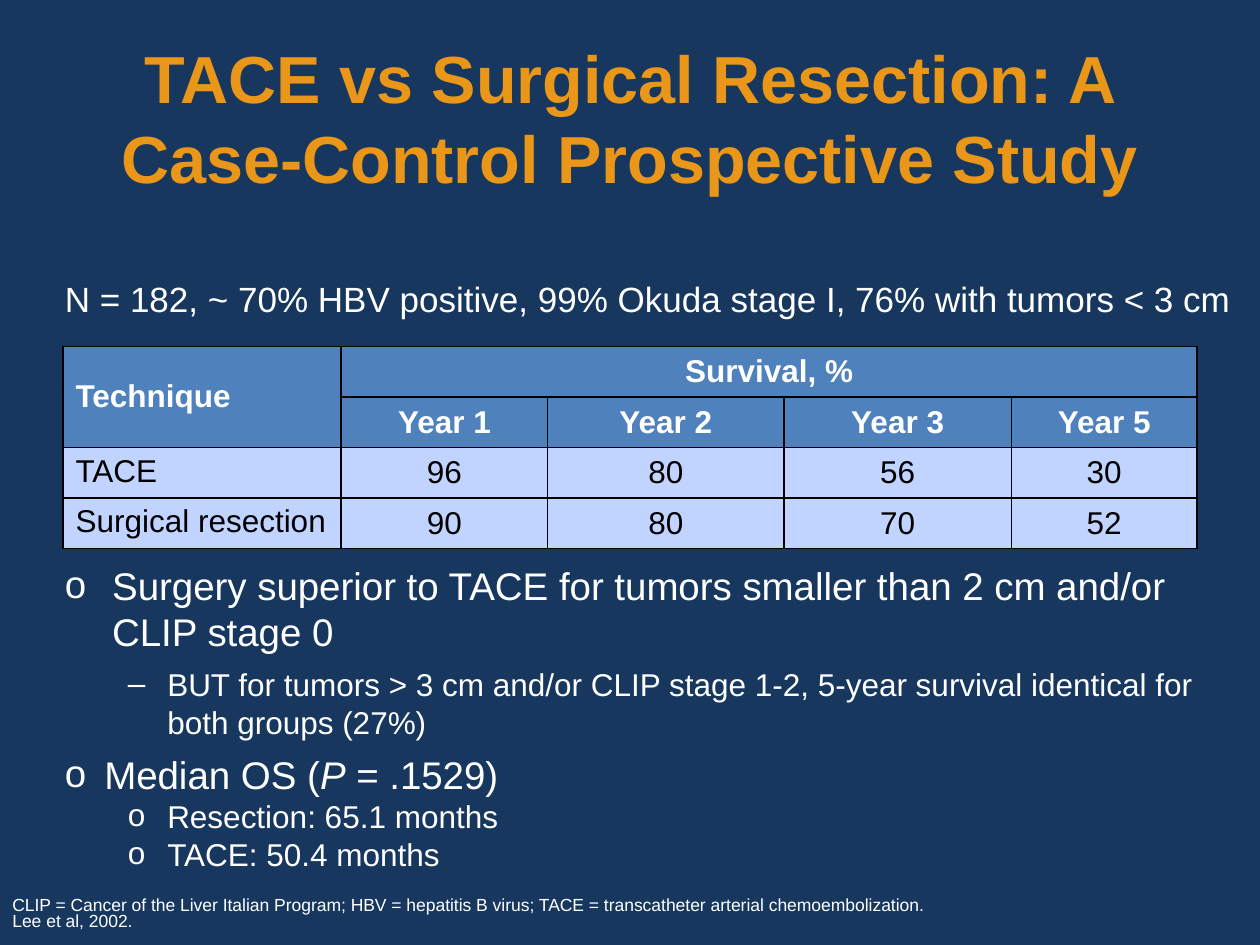
from itertools import product

from lxml.etree import SubElement
from pptx import Presentation
from pptx.dml.color import RGBColor
from pptx.enum.text import MSO_ANCHOR, PP_ALIGN
from pptx.oxml.ns import qn
from pptx.util import Pt

THEME = {
    "font": "Arial",
    "background": RGBColor.from_string("17375E"),
    "title": RGBColor.from_string("E99619"),
    "text": RGBColor.from_string("FFFFFF"),
    "cell text": RGBColor.from_string("000000"),
    "header": RGBColor.from_string("4F81BD"),
    "row": RGBColor.from_string("C0D4FF"),
    "border": "000000",
    "sizes": {"title": 38, "point": 22, "lead": 20, "detail": 18, "note": 10},
}


def write(paragraph, text, size, color=THEME["text"], **styles):
    run = paragraph.add_run()
    run.text = text
    run.font.color.rgb = color
    font = {"name": THEME["font"], "size": Pt(THEME["sizes"][size]), **styles}
    for name, value in font.items():
        setattr(run.font, name, value)


def add_frame(left, top, width, height):
    frame = slide.shapes.add_textbox(Pt(left), Pt(top), Pt(width), Pt(height)).text_frame
    frame.word_wrap = True
    return frame


deck = Presentation()
deck.slide_width, deck.slide_height = Pt(720), Pt(540)
slide = deck.slides.add_slide(deck.slide_layouts[6])
slide.background.fill.solid()
slide.background.fill.fore_color.rgb = THEME["background"]

# Title
heading = add_frame(36, 21.6, 648, 90)
heading.vertical_anchor = MSO_ANCHOR.MIDDLE
heading.paragraphs[0].alignment = PP_ALIGN.CENTER
write(heading.paragraphs[0], "TACE vs Surgical Resection: A Case-Control Prospective Study",
      "title", THEME["title"], bold=True)

# Study population
population = add_frame(30, 157.5, 690, 29.5).paragraphs[0]
spacing = {"line_spacing": 0.9, "space_before": Pt(10), "space_after": Pt(7)}
for name, value in spacing.items():
    setattr(population, name, value)
write(population, "N = 182, ~ 70% HBV positive, 99% Okuda stage I, 76% with tumors < 3 cm", "lead")

# Survival table
survival = [
    ["Technique", "Survival, %", "", "", ""],
    ["", "Year 1", "Year 2", "Year 3", "Year 5"],
    ["TACE", "96", "80", "56", "30"],
    ["Surgical resection", "90", "80", "70", "52"],
]
column_widths = [159, 118, 135, 130, 106]
header_rows = 2
table = slide.shapes.add_table(len(survival), len(column_widths),
                               Pt(36), Pt(198), Pt(648), Pt(115.2)).table
for column, width in zip(table.columns, column_widths):
    column.width = Pt(width)
for row in table.rows:
    row.height = Pt(28.8)
table.cell(0, 0).merge(table.cell(1, 0))
table.cell(0, 1).merge(table.cell(0, 4))

for r, c in product(range(len(survival)), range(len(column_widths))):
    cell = table.cell(r, c)
    is_header = r < header_rows
    is_technique = c == 0
    top_anchored = is_technique and not is_header
    cell.vertical_anchor = MSO_ANCHOR.TOP if top_anchored else MSO_ANCHOR.MIDDLE
    for side in ("a:lnL", "a:lnR", "a:lnT", "a:lnB"):
        border = SubElement(cell._tc.get_or_add_tcPr(), qn(side), w=str(Pt(1)))
        border_fill = SubElement(border, qn("a:solidFill"))
        SubElement(border_fill, qn("a:srgbClr"), val=THEME["border"])
    cell.fill.solid()
    cell.fill.fore_color.rgb = THEME["header" if is_header else "row"]
    if survival[r][c]:
        entry = cell.text_frame.paragraphs[0]
        entry.alignment = PP_ALIGN.LEFT if is_technique else PP_ALIGN.CENTER
        write(entry, survival[r][c], "detail",
              THEME["text" if is_header else "cell text"], bold=is_header)

# Findings: level, left margin, hanging indent, space before, bullet, size, text parts
findings = [
    (0, 27, 27, 6, "o", "point",
     ["Surgery superior to TACE for tumors smaller than 2 cm and/or CLIP stage 0"]),
    (1, 58.5, 22.5, 6, "–", "detail",
     ["BUT for tumors > 3 cm and/or CLIP stage 1-2, 5-year survival identical for "
      "both groups (27%)"]),
    (1, 22.5, 22.5, 6, "o", "point", ["Median OS (", "P", " = .1529)"]),
    (2, 58.5, 22.5, 0, "o", "detail", ["Resection: 65.1 months"]),
    (2, 58.5, 22.5, 0, "o", "detail", ["TACE: 50.4 months"]),
]
findings_frame = add_frame(30, 317.5, 660, 216.7)
for i, (level, margin, hanging, before, bullet, size, parts) in enumerate(findings):
    finding = findings_frame.add_paragraph() if i else findings_frame.paragraphs[0]
    finding.level = level
    finding.space_before = Pt(before)
    properties = finding._p.get_or_add_pPr()
    for name, value in {"marL": margin, "indent": -hanging}.items():
        properties.set(name, str(Pt(value)))
    bullet_color = SubElement(properties, qn("a:buClr"))
    SubElement(bullet_color, qn("a:srgbClr"), val=str(THEME["text"]))
    SubElement(properties, qn("a:buFont"), typeface=THEME["font"])
    SubElement(properties, qn("a:buChar"), char=bullet)
    for part in parts:
        write(finding, part, size, italic=part == "P")

# Abbreviations and citation
notes = [
    "CLIP = Cancer of the Liver Italian Program; HBV = hepatitis B virus; "
    "TACE = transcatheter arterial chemoembolization.",
    "Lee et al, 2002.",
]
notes_frame = add_frame(0, 510, 595.5, 26)
for i, text in enumerate(notes):
    note = notes_frame.add_paragraph() if i else notes_frame.paragraphs[0]
    note.line_spacing = 0.75
    write(note, text, "note")

deck.save("out.pptx")
